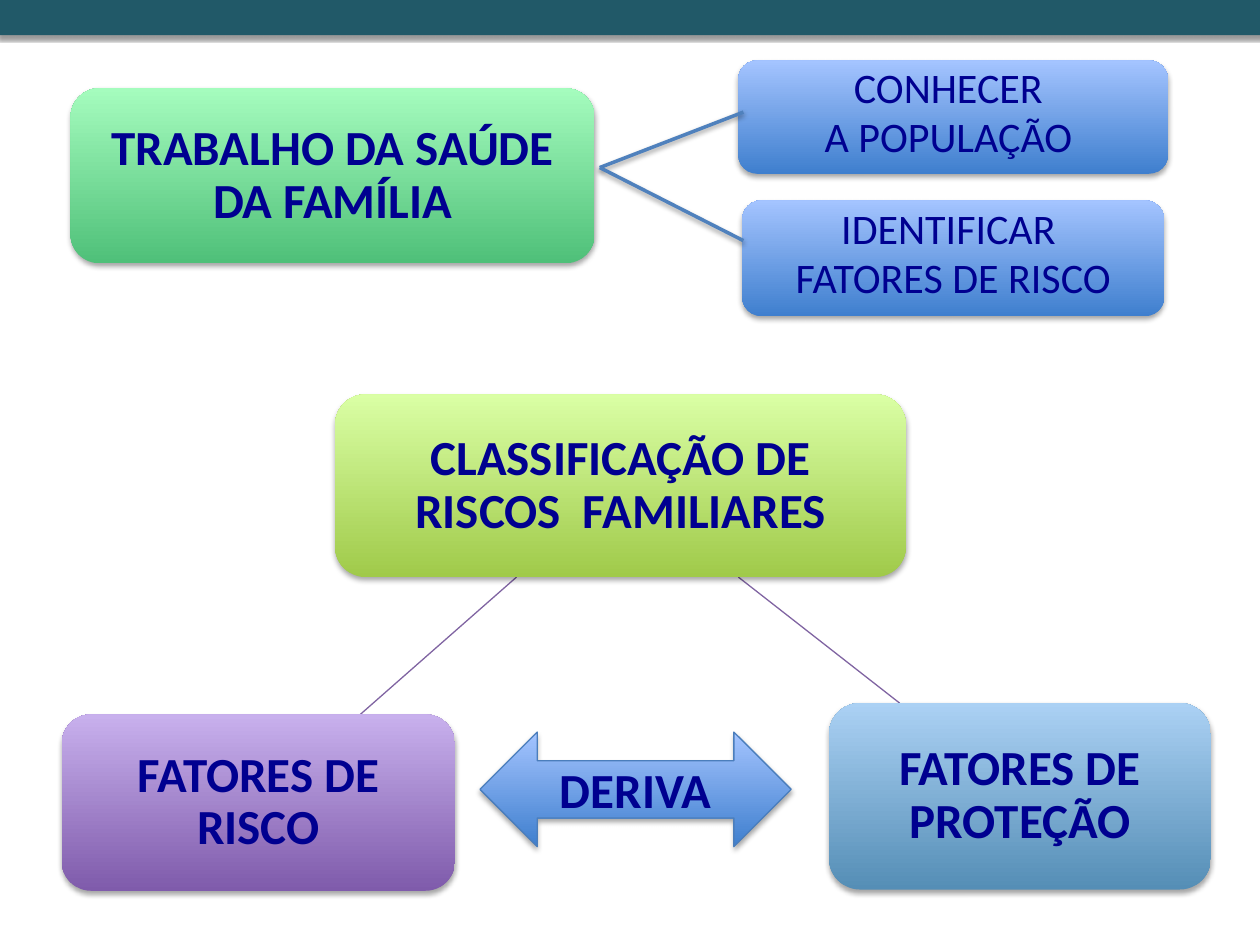
from lxml import etree
from pptx import Presentation, util as u
from pptx.dml.color import RGBColor
from pptx.enum import shapes, text
from pptx.oxml.ns import qn

NAVY = RGBColor(0x00, 0x00, 0x90)
TEAL = RGBColor(0x21, 0x59, 0x68)
BLUE = RGBColor(0x4F, 0x81, 0xBD)
EDGE = RGBColor(0x4B, 0x7E, 0xBC)
PLUM = RGBColor(0x80, 0x64, 0xA2)

# Gradients: (bottom, top)
LIME = (RGBColor(0xA0, 0xCA, 0x4A), RGBColor(0xDA, 0xFF, 0xA5))
GREEN = (RGBColor(0x4F, 0xC0, 0x79), RGBColor(0xA5, 0xFC, 0xBE))
STEEL = (RGBColor(0x55, 0x8E, 0xB6), RGBColor(0xAB, 0xD1, 0xF4))
VIOLET = (RGBColor(0x7F, 0x5B, 0xAB), RGBColor(0xC8, 0xB0, 0xED))
SKY = (RGBColor(0x3F, 0x7F, 0xCE), RGBColor(0xA4, 0xC4, 0xFF))

ROUND = shapes.MSO_SHAPE.ROUNDED_RECTANGLE


class Board:
    font = "Calibri"

    def __init__(self, slide):
        self.slide = slide

    def shade(self, item, blur=3.1, dist=1.8, alpha=35):
        """Set a downward shadow, or none when alpha is 0."""
        props = item._element.spPr
        for old in props.findall(qn("a:effectLst")):
            props.remove(old)
        effect = etree.SubElement(props, qn("a:effectLst"))
        if alpha:
            outer = etree.SubElement(
                effect, qn("a:outerShdw"), blurRad=str(u.Pt(blur)),
                dist=str(u.Pt(dist)), dir="5400000", rotWithShape="0")
            color = etree.SubElement(outer, qn("a:srgbClr"), val="000000")
            etree.SubElement(color, qn("a:alpha"), val=str(alpha * 1000))

    def shape(self, kind, box, edge=None):
        item = self.slide.shapes.add_shape(kind, *map(u.Inches, box))
        if edge:
            item.line.color.rgb = edge
            item.line.width = u.Pt(0.75)
        else:
            item.line.fill.background()
        return item

    def bar(self, box, color):
        item = self.shape(shapes.MSO_SHAPE.RECTANGLE, box)
        item.fill.solid()
        item.fill.fore_color.rgb = color
        self.shade(item, 2, 2, 40)

    def card(self, box, fade, lines, size=28, bold=True, pad=0.08,
             lead=0.9, after=10, kind=ROUND, edge=None):
        item = self.shape(kind, box, edge)
        item.fill.gradient()
        item.fill.gradient_angle = 90
        for stop, color in zip(item.fill.gradient_stops, fade):
            stop.color.rgb = color
        self.shade(item)

        frame = item.text_frame
        frame.word_wrap = True
        frame.vertical_anchor = text.MSO_ANCHOR.MIDDLE
        frame.margin_left = frame.margin_right = u.Inches(pad)
        frame.margin_top = frame.margin_bottom = u.Inches(pad)
        for i, line in enumerate(lines):
            para = frame.add_paragraph() if i else frame.paragraphs[0]
            para.alignment = text.PP_ALIGN.CENTER
            para.line_spacing = lead
            para.space_after = u.Pt(after)
            run = para.add_run()
            run.text = line
            run.font.name = self.font
            run.font.size = u.Pt(size)
            run.font.bold = bold
            run.font.color.rgb = NAVY

    def link(self, start, end, color, width, alpha=0):
        item = self.slide.shapes.add_connector(
            shapes.MSO_CONNECTOR.STRAIGHT, *map(u.Inches, start + end))
        item.line.color.rgb = color
        item.line.width = u.Pt(width)
        self.shade(item, 3.1, 1.6, alpha)


def main():
    deck = Presentation()
    deck.slide_width, deck.slide_height = u.Inches(10), u.Inches(7.5)
    board = Board(deck.slides.add_slide(deck.slide_layouts[6]))

    # Top band
    board.bar((-0.02, 0, 10.04, 0.28), TEAL)

    # Risk tree: links first, then cards
    board.link((5.86, 4.58), (7.14, 5.58), PLUM, 0.75)
    board.link((4.1, 4.58), (2.86, 5.67), PLUM, 0.75)
    for box, fade, line in (
        ((2.66, 3.13, 4.53, 1.45), LIME, "CLASSIFICAÇÃO DE RISCOS  FAMILIARES"),
        ((0.56, 0.7, 4.16, 1.39), GREEN, "TRABALHO DA SAÚDE DA FAMÍLIA"),
        ((6.58, 5.58, 3.03, 1.48), STEEL, "FATORES DE PROTEÇÃO"),
        ((0.49, 5.67, 3.12, 1.4), VIOLET, "FATORES DE RISCO"),
    ):
        board.card(box, fade, [line])

    # Arrow between the two kinds of factor
    board.card((3.81, 5.81, 2.47, 0.91), SKY, ["DERIVA"], pad=0.05, lead=1,
               after=0, kind=shapes.MSO_SHAPE.LEFT_RIGHT_ARROW, edge=EDGE)

    # Tasks of family health work
    for box, lines, end in (
        ((5.86, 0.48, 3.41, 0.9), ["CONHECER ", "A POPULAÇÃO "], (5.9, 0.89)),
        ((5.89, 1.59, 3.35, 0.92), ["IDENTIFICAR ", "FATORES DE RISCO"],
         (5.9, 1.91)),
    ):
        board.card(box, SKY, lines, size=24, bold=False, pad=0.1,
                   lead=0.7, after=8)
        board.link((4.76, 1.33), end, BLUE, 2, alpha=38)

    deck.save("out.pptx")


if __name__ == "__main__":
    main()
